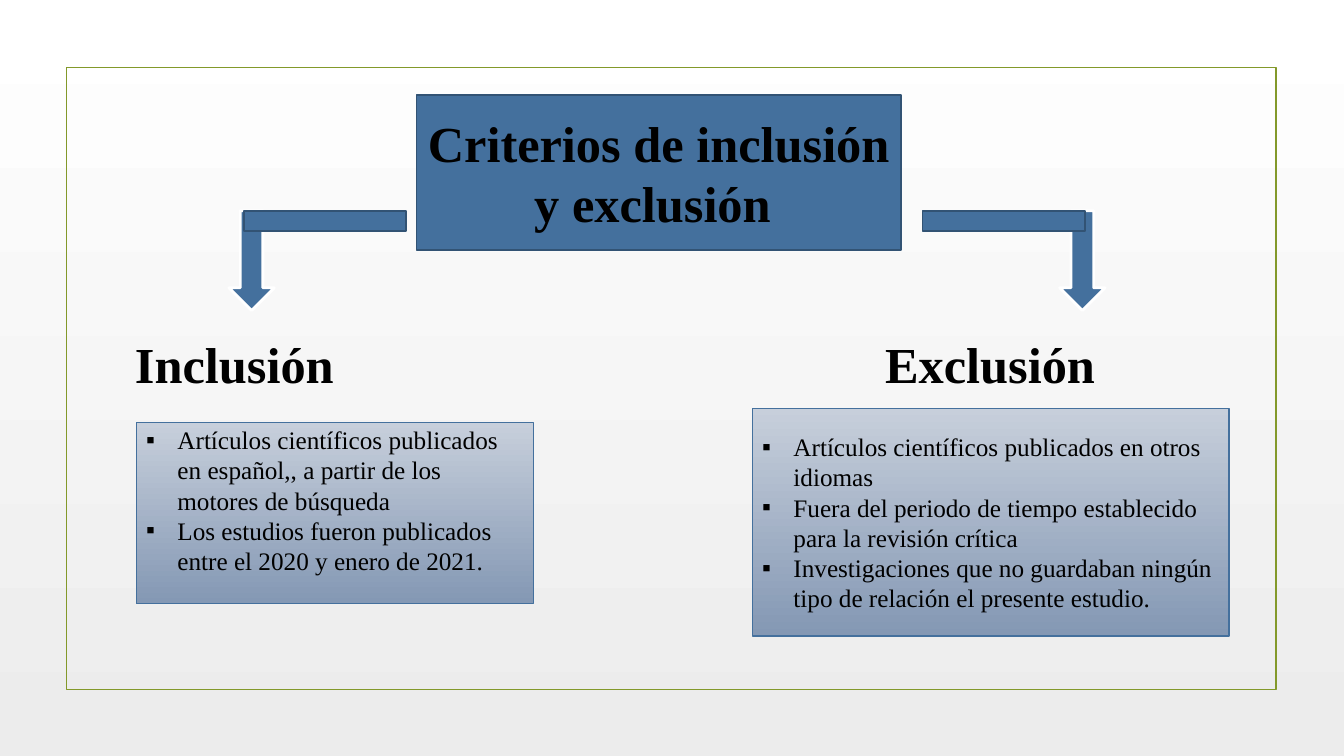
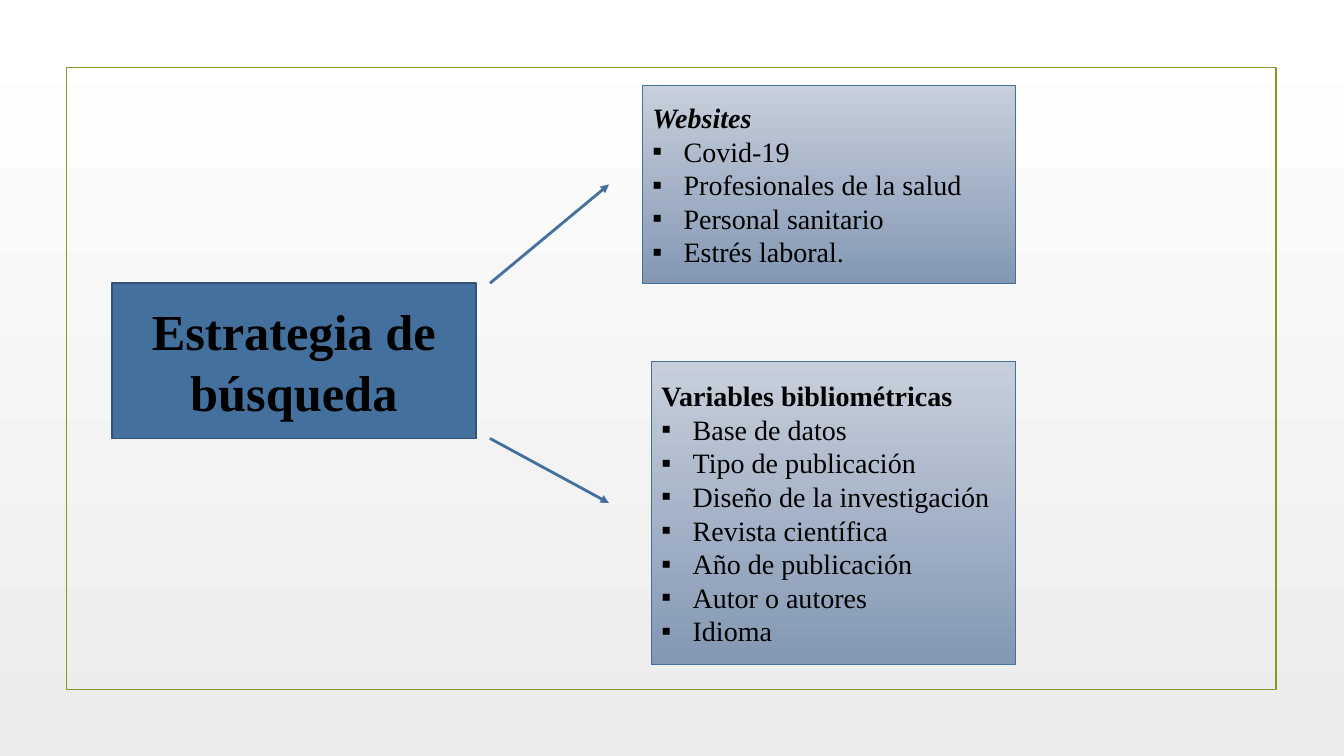
from pptx import Presentation
from pptx.dml.color import RGBColor
from pptx.enum.shapes import MSO_CONNECTOR, MSO_SHAPE
from pptx.enum.text import MSO_ANCHOR, MSO_AUTO_SIZE, PP_ALIGN
from pptx.oxml.ns import qn
from pptx.util import Inches, Pt
from lxml import etree

RECTANGLE, DOWN_ARROW = MSO_SHAPE.RECTANGLE, MSO_SHAPE.DOWN_ARROW
STRAIGHT = MSO_CONNECTOR.STRAIGHT
TOP, MIDDLE = MSO_ANCHOR.TOP, MSO_ANCHOR.MIDDLE
FIXED_SIZE = MSO_AUTO_SIZE.NONE
LEFT, CENTER, JUSTIFY = PP_ALIGN.LEFT, PP_ALIGN.CENTER, PP_ALIGN.JUSTIFY

FONT = "Times New Roman"
BLACK, WHITE = "000000", "FFFFFF"
BLUE, DARK_BLUE, GREEN = "44709D", "325374", "83992A"
PAGE_GRADIENT = (WHITE, "ECECEC")
PANEL_GRADIENT = ("C7CFDB", "8498B4")
HEADING_SIZE = 36
BULLET_INDENT = Inches(0.31)
TWO_CONTENT = 3


def rgb(value):
    """Turn a hex string into a colour."""
    return RGBColor.from_string(value)


def set_gradient(fill, colours):
    """Fill with a gradient running from top to bottom."""
    fill.gradient()
    fill.gradient_angle = 270
    for stop, colour in zip(fill.gradient_stops, colours):
        stop.color.rgb = rgb(colour)


def set_line(line, colour, width):
    """Give a line its colour and its width in points."""
    line.color.rgb = rgb(colour)
    line.width = Pt(width)


def set_font(paragraph, size, bold=False, italic=False):
    """Set the common typeface on a paragraph."""
    font = paragraph.font
    font.name = FONT
    font.size = Pt(size)
    font.bold = bold
    font.italic = italic
    font.color.rgb = rgb(BLACK)


def place(shape, box):
    """Move a shape to left, top, width and height in inches."""
    shape.left, shape.top, shape.width, shape.height = map(Inches, box)


def add_block(slide, kind, box, fill, line, width):
    """Add a preset shape, hollow when no fill is given."""
    block = slide.shapes.add_shape(kind, *map(Inches, box))
    block.shadow.inherit = False
    if fill:
        block.fill.solid()
        block.fill.fore_color.rgb = rgb(fill)
    else:
        block.fill.background()
    set_line(block.line, line, width)
    return block


def style_master(prs, slide):
    """Put the page gradient and the green frame on the master."""
    master = prs.slide_master
    set_gradient(master.background.fill, PAGE_GRADIENT)
    frame = add_block(slide, RECTANGLE, (0.66, 0.67, 12, 6.17), None, GREEN, 1.25)
    master.shapes._spTree.insert(2, frame._element)


def set_title(slide, text, box):
    """Show the title as a blue box."""
    title = slide.shapes.title
    place(title, box)
    title.fill.solid()
    title.fill.fore_color.rgb = rgb(BLUE)
    set_line(title.line, DARK_BLUE, 1.25)
    frame = title.text_frame
    frame.text = text
    frame.word_wrap = True
    frame.auto_size = FIXED_SIZE
    frame.vertical_anchor = MIDDLE
    frame.paragraphs[0].alignment = CENTER
    set_font(frame.paragraphs[0], HEADING_SIZE, bold=True)


def set_bullet(paragraph, symbol):
    """Give a paragraph a hanging bullet, or none."""
    props = paragraph._p.get_or_add_pPr()
    indent = BULLET_INDENT if symbol else 0
    props.set("marL", str(indent))
    props.set("indent", str(-indent))
    if symbol:
        etree.SubElement(props, qn("a:buChar")).set("char", symbol)
    else:
        etree.SubElement(props, qn("a:buNone"))


def fill_panel(panel, box, items, size, heading=None, italic=False,
               align=LEFT, anchor=MIDDLE):
    """Show a body placeholder as a shaded panel with a bulleted list."""
    place(panel, box)
    set_gradient(panel.fill, PANEL_GRADIENT)
    set_line(panel.line, BLUE, 0.75)
    frame = panel.text_frame
    frame.text = "\n".join(([heading] if heading else []) + items)
    frame.word_wrap = True
    frame.auto_size = FIXED_SIZE
    frame.vertical_anchor = anchor
    if anchor == TOP:
        frame.margin_top = Inches(0.02)
    for index, paragraph in enumerate(frame.paragraphs):
        is_heading = bool(heading) and index == 0
        set_bullet(paragraph, None if is_heading else "▪")
        paragraph.space_before = Pt(0)
        paragraph.alignment = align
        set_font(paragraph, size, is_heading, is_heading and italic)


def add_heading(slide, text, left):
    """Add the heading above a panel."""
    box = slide.shapes.add_textbox(*map(Inches, (left, 3.26, 2.89, 0.71)))
    box.text_frame.word_wrap = True
    box.text_frame.text = text
    set_font(box.text_frame.paragraphs[0], HEADING_SIZE, bold=True)


def add_elbow(slide, arrow_left, bar_left):
    """Add a down arrow and the bar that joins it to the title."""
    add_block(slide, DOWN_ARROW, (arrow_left, 2.09, 0.45, 0.99), BLUE, WHITE, 2)
    add_block(slide, RECTANGLE, (bar_left, 2.09, 1.61, 0.2), BLUE, DARK_BLUE, 1.25)


def add_arrow(slide, start, end):
    """Add a straight arrow between two points."""
    arrow = slide.shapes.add_connector(STRAIGHT, *map(Inches, start + end))
    set_line(arrow.line, BLUE, 2)
    etree.SubElement(arrow.line._get_or_add_ln(), qn("a:tailEnd")).set("type", "triangle")
    etree.SubElement(arrow._element.spPr, qn("a:effectLst"))


def build_criteria(slide):
    """Build the slide on inclusion and exclusion criteria."""
    set_title(slide, "Criterios de inclusión y exclusión ", (4.13, 0.94, 4.81, 1.54))
    add_elbow(slide, 2.27, 2.42)
    add_elbow(slide, 10.51, 9.15)
    add_heading(slide, "Inclusión", 1.24)
    add_heading(slide, "Exclusión", 8.68)
    fill_panel(slide.placeholders[1], (1.35, 4.19, 3.94, 1.8), [
        "Artículos científicos publicados en español,, a partir de los motores de búsqueda",
        "Los estudios fueron publicados entre el 2020 y enero de 2021.",
    ], 18, anchor=TOP)
    fill_panel(slide.placeholders[2], (7.46, 4.05, 4.73, 2.26), [
        "Artículos científicos publicados en otros idiomas",
        "Fuera del periodo de tiempo establecido para la revisión crítica",
        "Investigaciones que no guardaban ningún tipo de relación el presente estudio.",
    ], 18)


def build_strategy(slide):
    """Build the slide on the search strategy."""
    set_title(slide, "Estrategia de búsqueda", (1.11, 2.81, 3.61, 1.54))
    fill_panel(slide.placeholders[1], (6.37, 0.85, 3.7, 1.96), [
        "Covid-19",
        "Profesionales de la salud",
        "Personal sanitario",
        "Estrés laboral.",
    ], 20, heading="Websites", italic=True, align=JUSTIFY)
    fill_panel(slide.placeholders[2], (6.46, 3.59, 3.61, 3), [
        "Base de datos",
        "Tipo de publicación",
        "Diseño de la investigación",
        "Revista científica",
        "Año de publicación",
        "Autor o autores",
        "Idioma",
    ], 20, heading="Variables bibliométricas", align=JUSTIFY)
    add_arrow(slide, (4.86, 2.81), (6.04, 1.83))
    add_arrow(slide, (4.86, 4.35), (6.04, 4.99))


def main():
    """Build and save the presentation."""
    prs = Presentation()
    prs.slide_width, prs.slide_height = Inches(13.33), Inches(7.5)
    layout = prs.slide_layouts[TWO_CONTENT]
    criteria, strategy = (prs.slides.add_slide(layout) for _ in range(2))
    style_master(prs, criteria)
    build_criteria(criteria)
    build_strategy(strategy)
    prs.save("out.pptx")


if __name__ == "__main__":
    main()
